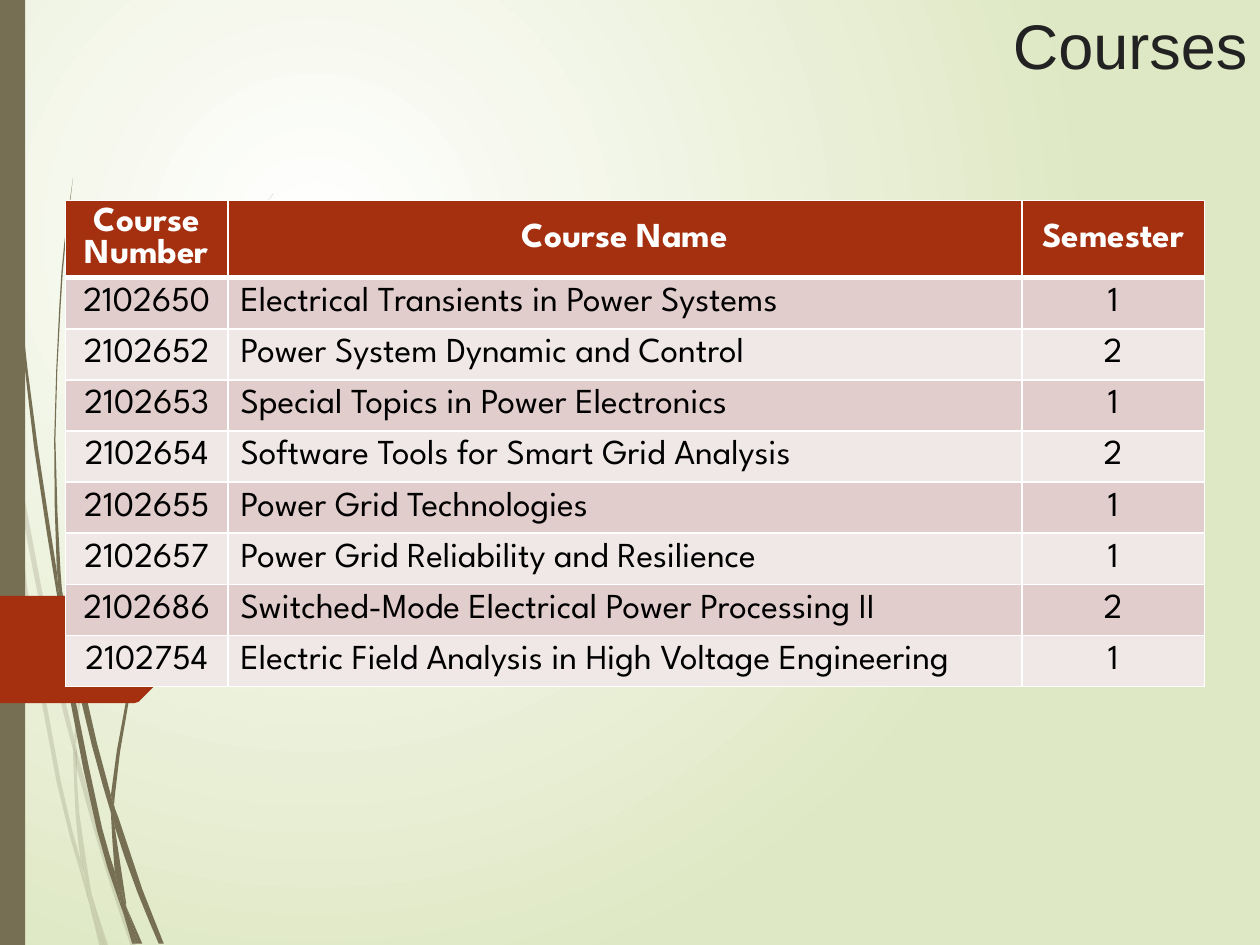
from dataclasses import dataclass

import pptx
import pptx.dml.color
import pptx.enum.shapes
import pptx.enum.text
import pptx.oxml
import pptx.oxml.ns
import pptx.util
from pptx.util import Inches

COLORS = {
    "white": "FFFFFF", "pale_green": "DFE8C4", "olive": "766F54", "rust": "A53010",
    "title": "222222", "body": "000000", "band_dark": "E1CDCC", "band_light": "F0E8E7",
}
ALIGN = pptx.enum.text.PP_ALIGN
ANCHOR = pptx.enum.text.MSO_ANCHOR
A_NS = pptx.oxml.ns.nsdecls("a")
Point = tuple[float, float]


@dataclass(frozen=True)
class Blade:
    """A sliver of grass: one smooth edge out, another smooth edge back."""
    out: list[Point]
    back: list[Point]


@dataclass(frozen=True)
class Course:
    number: str
    name: str
    semester: str


FAINT_BLADES = [
    Blade([(0.08, 3.5), (0.06, 3.22), (0, 2.82)], [(0, 2.99), (0.07, 3.44)]),
    Blade([(0.1, 3.45), (0.12, 3.76), (0.4, 5.22), (0.59, 5.99)],
          [(0.59, 5.86), (0.43, 5.2), (0.1, 3.45)]),
    Blade([(0.61, 5.96), (0.61, 6.1), (0.85, 6.94), (1.04, 7.51)],
          [(1.08, 7.51), (0.88, 6.92), (0.64, 6.07)]),
    Blade([(0.73, 7.11), (0.83, 7.51)], [(0.86, 7.51)]),
    Blade([(0.08, 3.5), (0.19, 4.7), (0.45, 6.21), (0.64, 6.93), (0.7, 7.14)],
          [(0.69, 7.07), (0.64, 6.83), (0.48, 6.19), (0.22, 4.69), (0.12, 3.76)]),
    Blade([(0.58, 5.99), (0.6, 6.46), (0.64, 6.83), (0.67, 6.92), (0.73, 7.11)],
          [(0.72, 7.06), (0.63, 6.46), (0.61, 6.1), (0.61, 6.08)]),
    Blade([(0.61, 5.96), (0.61, 5.84), (0.76, 4.62), (1.11, 3.49), (1.59, 2.45),
           (1.87, 1.98), (2.01, 1.75), (2.17, 1.54)],
          [(2.17, 1.53), (2.01, 1.75), (1.86, 1.97), (1.58, 2.44), (1.1, 3.48),
           (0.75, 4.61), (0.59, 5.84)]),
    Blade([(0.7, 7.14), (0.79, 7.51)], [(0.82, 7.51)]),
    Blade([(0.61, 6.08), (0.61, 5.96)], [(0.59, 5.86), (0.58, 5.99)]),
    Blade([(0.65, 6.83), (0.69, 7.07), (0.7, 7.14), (0.82, 7.51)],
          [(0.83, 7.51), (0.73, 7.11), (0.67, 6.92)]),
]
SOLID_BLADES = [
    Blade([(0.02, 0), (0.03, 0.48), (0.05, 1.1), (0.14, 2.33), (0.27, 3.55), (0.46, 4.77)],
          [(0.47, 4.81), (0.45, 4.53), (0.3, 3.55), (0.15, 2.32), (0.06, 1.09),
           (0.04, 0.48), (0.03, 0)]),
    Blade([(0.5, 4.72), (0.53, 5.05), (0.73, 5.92), (0.88, 6.45)],
          [(0.88, 6.31), (0.77, 5.9), (0.5, 4.72)]),
    Blade([(0.91, 6.41), (0.91, 6.56), (1.09, 7.08), (1.26, 7.49)],
          [(1.3, 7.49), (1.13, 7.06), (0.94, 6.49)]),
    Blade([(0.47, 4.77), (0.56, 5.57), (0.77, 6.59), (0.92, 7.08), (0.97, 7.22)],
          [(0.96, 7.17), (0.91, 6.91), (0.81, 6.57), (0.6, 5.56), (0.53, 5.05)]),
    Blade([(0.5, 4.72), (0.48, 4.53), (0.44, 3.49), (0.48, 2.45), (0.52, 1.93), (0.58, 1.41)],
          [(0.58, 1.41), (0.51, 1.93), (0.47, 2.45), (0.43, 3.49), (0.45, 4.49), (0.49, 4.72)]),
    Blade([(1, 7.19), (1.1, 7.49)], [(1.13, 7.49)]),
    Blade([(0.45, 4.49), (0.47, 4.77), (0.53, 5.05)], [(0.5, 4.72), (0.49, 4.72)]),
    Blade([(0.91, 6.41), (0.91, 6.33), (1.03, 5.52), (1.31, 4.76), (1.69, 4.06),
           (1.91, 3.74), (2.16, 3.44)],
          [(2.15, 3.44), (1.91, 3.73), (1.68, 4.05), (1.29, 4.74), (1.01, 5.51), (0.88, 6.31)]),
    Blade([(0.97, 7.22), (1.05, 7.49)], [(1.08, 7.49)]),
    Blade([(0.88, 6.45), (0.91, 6.91), (0.96, 7.06), (1, 7.19)],
          [(1, 7.16), (0.91, 6.56), (0.9, 6.51)]),
    Blade([(0.88, 6.31), (0.88, 6.45)], [(0.91, 6.56), (0.91, 6.41)]),
    Blade([(0.91, 6.91), (0.96, 7.17), (0.97, 7.22), (1.08, 7.49)],
          [(1.1, 7.49), (1, 7.19), (0.96, 7.06)]),
]
HEADER = Course("Course Number", "Course Name", "Semester")
COURSES = [
    Course("2102650", "Electrical Transients in Power Systems", "1"),
    Course("2102652", "Power System Dynamic and Control", "2"),
    Course("2102653", "Special Topics in Power Electronics", "1"),
    Course("2102654", "Software Tools for Smart Grid Analysis", "2"),
    Course("2102655", "Power Grid Technologies", "1"),
    Course("2102657", "Power Grid Reliability and Resilience", "1"),
    Course("2102686", "Switched-Mode Electrical Power Processing II", "2"),
    Course("2102754", "Electric Field Analysis in High Voltage Engineering", "1"),
]


def rgb(name: str) -> pptx.dml.color.RGBColor:
    return pptx.dml.color.RGBColor.from_string(COLORS[name])


def write(frame, text: str, *, font: str, size: float, color: str,
          bold: bool = False, align=ALIGN.LEFT) -> None:
    paragraph = frame.paragraphs[0]
    paragraph.alignment = align
    run = paragraph.add_run()
    run.text = text
    run.font.name, run.font.size, run.font.bold = font, pptx.util.Pt(size), bold
    run.font.color.rgb = rgb(color)


def paint(shape, color: str, opacity: int = 100) -> None:
    shape.shadow.inherit = False
    shape.fill.solid()
    shape.fill.fore_color.rgb = rgb(color)
    shape.line.fill.background()
    if opacity < 100:
        fill_color = shape._element.spPr.find(".//" + pptx.oxml.ns.qn("a:srgbClr"))
        fill_color.append(pptx.oxml.parse_xml(f'<a:alpha {A_NS} val="{opacity * 1000}"/>'))


def smooth(knots: list[Point]) -> list[Point]:
    """The knots, with the middle of each Catmull-Rom span of a long edge added."""
    if len(knots) < 4:
        return knots
    padded = [knots[0], *knots, knots[-1]]
    points = [knots[0]]
    for a, b, c, d in zip(padded, padded[1:], padded[2:], padded[3:]):
        middle = tuple((9 * (q + r) - p - s) / 16 for p, q, r, s in zip(a, b, c, d))
        points += [middle, c]
    return points


def add_outline(shapes, points: list[Point], color: str, opacity: int = 100) -> None:
    start, *rest = [(Inches(x), Inches(y)) for x, y in points]
    builder = shapes.build_freeform(*start)
    builder.add_line_segments(rest, close=True)
    paint(builder.convert_to_shape(), color, opacity)


def add_blades(slide, blades: list[Blade], opacity: int) -> None:
    tuft = slide.shapes.add_group_shape()
    for blade in blades:
        add_outline(tuft.shapes, smooth(blade.out) + smooth(blade.back), "olive", opacity)


def set_background(slide) -> None:
    fill = slide.background.fill
    fill.gradient()
    for stop, color in zip(fill.gradient_stops, ("white", "pale_green")):
        stop.color.rgb = rgb(color)
    gradient = slide.element.find(".//" + pptx.oxml.ns.qn("a:gradFill"))
    linear = gradient.find(pptx.oxml.ns.qn("a:lin"))
    gradient.replace(linear, pptx.oxml.parse_xml(
        f'<a:path {A_NS} path="circle">'
        '<a:fillToRect l="50000" t="50000" r="100000" b="100000"/></a:path>'))


def set_borders(cell, widths: dict[str, int]) -> None:
    properties = cell._tc.get_or_add_tcPr()
    for index, (side, width) in enumerate(widths.items()):
        properties.insert(index, pptx.oxml.parse_xml(
            f'<a:{side} {A_NS} w="{pptx.util.Pt(width)}"><a:solidFill>'
            f'<a:srgbClr val="{COLORS["white"]}"/></a:solidFill></a:{side}>'))


def add_course_table(slide) -> None:
    widths, rows = (1.29, 6.3, 1.45), [HEADER, *COURSES]
    row_height = Inches(3.65 / len(rows))
    frame = slide.shapes.add_table(len(rows), len(widths), Inches(0.52), Inches(1.59),
                                   Inches(sum(widths)), Inches(4.57))
    table = frame.table
    for column, width in zip(table.columns, widths):
        column.width = Inches(width)
    for r, course in enumerate(rows):
        table.rows[r].height = row_height
        is_header = r == 0
        band = "rust" if is_header else ("band_light", "band_dark")[r % 2]
        for c, text in enumerate((course.number, course.name, course.semester)):
            cell = table.cell(r, c)
            cell.fill.solid()
            cell.fill.fore_color.rgb = rgb(band)
            cell.vertical_anchor = ANCHOR.MIDDLE
            write(cell.text_frame, text, font="League Spartan", size=20, bold=is_header,
                  color="white" if is_header else "body",
                  align=ALIGN.LEFT if c == 1 and not is_header else ALIGN.CENTER)
            set_borders(cell, {"lnL": 1, "lnR": 1, "lnT": 3 if r == 1 else 1,
                               "lnB": 3 if is_header else 1})


def main() -> None:
    deck = pptx.Presentation()
    deck.slide_width, deck.slide_height = Inches(10), Inches(7.5)
    slide = deck.slides.add_slide(deck.slide_layouts[5])
    set_background(slide)

    # Grass, side bar and page arrow
    add_blades(slide, FAINT_BLADES, 20)
    add_blades(slide, SOLID_BLADES, 100)
    side_bar = slide.shapes.add_shape(pptx.enum.shapes.MSO_SHAPE.RECTANGLE,
                                      0, 0, Inches(0.2), Inches(7.5))
    paint(side_bar, "olive")
    add_outline(slide.shapes, [(-0.03, 4.73), (1.07, 4.73), (1.1, 4.74), (1.49, 5.13),
                               (1.5, 5.15), (1.49, 5.18), (1.1, 5.57), (1.07, 5.58),
                               (-0.03, 5.58)], "rust")

    # Title
    title = slide.shapes.title
    title.left, title.top = Inches(1.14), 0
    title.width, title.height = Inches(8.86), Inches(0.91)
    title.text_frame.vertical_anchor = ANCHOR.TOP
    title.text_frame.margin_top = Inches(0.05)
    write(title.text_frame, "Courses", font="Arial", size=36, color="title", align=ALIGN.RIGHT)

    add_course_table(slide)
    deck.save("out.pptx")


if __name__ == "__main__":
    main()
